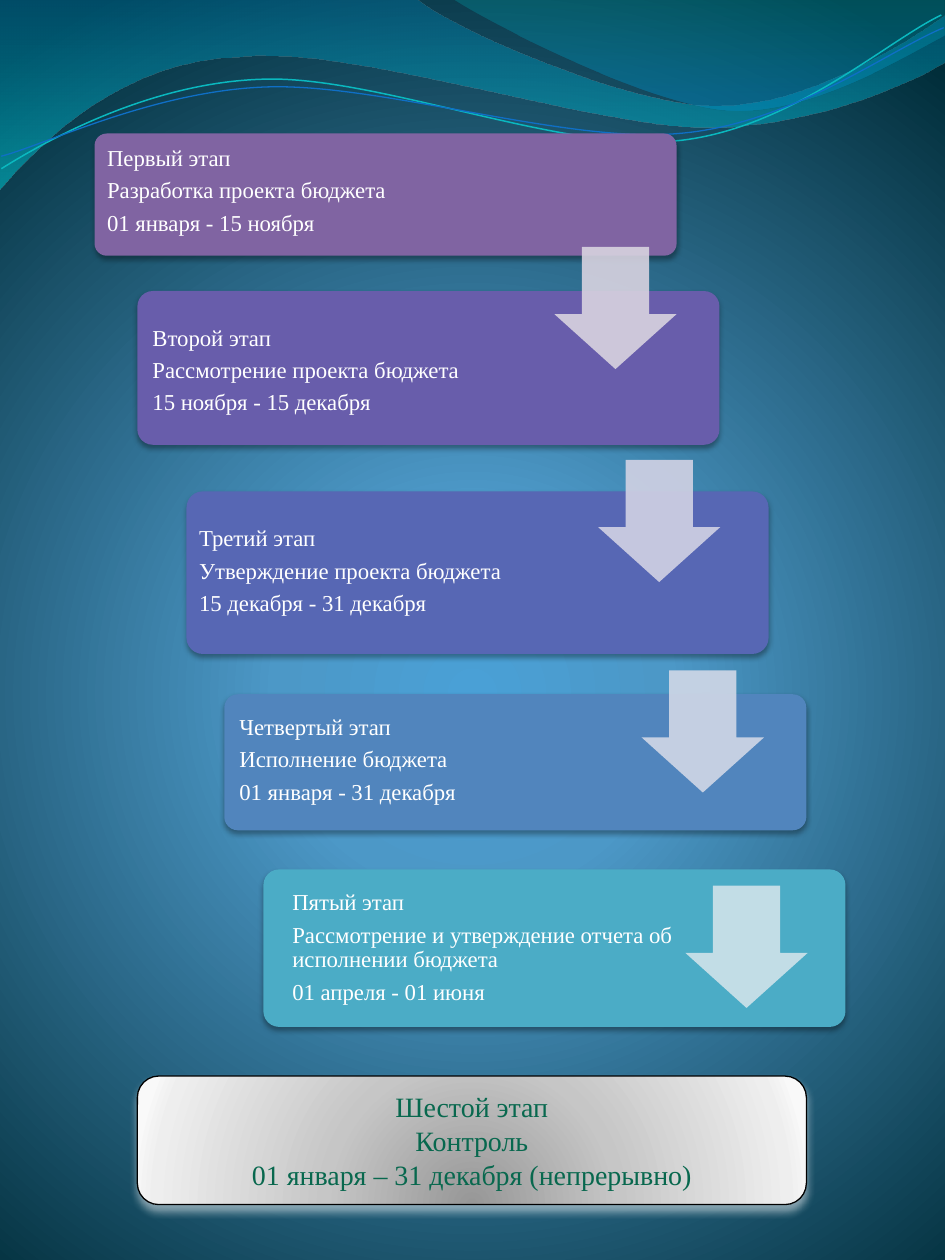
import math

from lxml import etree
from pptx import Presentation
from pptx import util as u
from pptx.dml.color import RGBColor
from pptx.enum import shapes, text
from pptx.oxml.ns import qn

PX = 9144  # EMU in one px, 100 px to the inch
FONT = "Times New Roman"

# Outlines: a start point, then one point for a line or three for a curve.
WAVES = [
    ([[(0, -1)], [(330, -1)], [(357, 22), (498, 84), (569, 84)],
      [(640, 84), (719, 34), (750, 12)], [(751, 48)],
      [(738, 58), (652, 101), (559, 101)], [(466, 100), (286, 37), (193, 45)],
      [(97, 47), (34, 111), (-1, 151)]],
     [(0, "0074A1", 45), (100, "00C6CF", 55)]),
    ([[(359, -1)], [(382, 15), (511, 82), (577, 87)],
      [(642, 92), (721, 43), (750, 28)], [(750, 0)]],
     [(0, "00A1A9", 30), (80, "008BBF", 45)]),
]
STRANDS = [
    ([[(1, 134)], [(36, 112), (118, 66), (207, 63)], [(296, 59), (445, 121), (535, 112)],
      [(626, 104), (703, 33), (747, 12)]], "0AB8BF", 0.85),
    ([[(1, 124)], [(36, 115), (122, 72), (212, 69)], [(302, 66), (449, 114), (538, 106)],
      [(628, 99), (705, 40), (749, 22)]], "0F6FC6", 0.75),
]
STRAND_TILT = 2.7  # degrees counter-clockwise
STRAND_CENTER = (375, 78)
# Card left, top, height, fill; text box offset, width, height, inset; lines
STAGES = [
    ((75, 106, 97, "8064A2"), (4, -15, 284, 122, 6),
     ["Первый этап", "Разработка проекта бюджета", "01 января - 15 ноября"]),
    ((109, 231, 122, "685DAB"), (6, 6, 322, 115, 6),
     ["Второй этап", "Рассмотрение проекта бюджета", "15 ноября - 15 декабря"]),
    ((148, 390, 129, "5767B4"), (4, 3, 322, 122, 6),
     ["Третий этап", "Утверждение проекта бюджета", "15 декабря - 31 декабря"]),
    ((178, 551, 108, "5185BD"), (5, 2, 322, 101, 7),
     ["Четвертый этап", "Исполнение бюджета", "01 января - 31 декабря"]),
    ((209, 690, 125, "4BACC6"), (16, 4, 322, 117, 7),
     ["Пятый этап", "Рассмотрение и утверждение отчета об исполнении бюджета",
      "01 апреля - 01 июня"]),
]
CARD_W = 462
ARROWS = [(196, "D8D3E0"), (365, "D2D2E4"), (532, "D1D8E7"), (703, "D0E3EA")]
ARROW_LEFT, ARROW_STEP, ARROW_SIZE = 440, 34.67, 97


def px(*values):
    return [round(v * PX) for v in values]


def rgb(code):
    return RGBColor.from_string(code)


def add_color(parent, code, alpha=100):
    color = etree.SubElement(parent, qn("a:srgbClr"), val=code)
    if alpha < 100:
        etree.SubElement(color, qn("a:alpha"), val=str(alpha * 1000))


def set_gradient(fill, owner, stops, center=None):
    """Fill with (position, colour, alpha) stops, downwards or round a center rectangle."""
    fill.gradient()
    grad = owner.find(".//" + qn("a:gradFill"))
    for child in list(grad):
        grad.remove(child)
    stop_list = etree.SubElement(grad, qn("a:gsLst"))
    for pos, code, alpha in stops:
        add_color(etree.SubElement(stop_list, qn("a:gs"), pos=str(pos * 1000)), code, alpha)
    if center:
        path = etree.SubElement(grad, qn("a:path"))
        path.set("path", "circle")
        sides = {side: str(v * 1000) for side, v in zip("ltrb", center)}
        etree.SubElement(path, qn("a:fillToRect"), **sides)
    else:
        etree.SubElement(grad, qn("a:lin"), ang="5400000", scaled="1")


def set_shadow(sp, code, alpha, blur, dist):
    sp.shadow.inherit = False
    effects = sp._element.spPr.find(qn("a:effectLst"))
    shadow = etree.SubElement(effects, qn("a:outerShdw"), blurRad=str(u.Pt(blur)),
                              dist=str(u.Pt(dist)), dir="5400000", rotWithShape="0")
    add_color(shadow, code, alpha)


def add_outline(s, outline, close):
    """Freeform whose three-point segments become Bezier curves."""
    points = [px(*p) for segment in outline for p in segment]
    builder = s.shapes.build_freeform(*points[0])
    builder.add_line_segments(points[1:], close=close)
    sp = builder.convert_to_shape()
    sp.shadow.inherit = False
    lines = iter(sp._element.findall(".//" + qn("a:lnTo")))
    for segment in outline[1:]:
        first = next(lines)
        if len(segment) == 3:
            first.tag = qn("a:cubicBezTo")
            for line in (next(lines), next(lines)):
                line.getparent().remove(line)
                first.append(line[0])
    return sp


def turn(point, degrees, center):
    a = math.radians(degrees)
    dx, dy = point[0] - center[0], point[1] - center[1]
    return (center[0] + dx * math.cos(a) - dy * math.sin(a),
            center[1] + dx * math.sin(a) + dy * math.cos(a))


def add_waves(s):
    for outline, stops in WAVES:
        sp = add_outline(s, outline, True)
        set_gradient(sp.fill, sp._element.spPr, stops)
        sp.line.fill.background()
    for outline, code, width in STRANDS:
        level = [[turn(p, STRAND_TILT, STRAND_CENTER) for p in seg] for seg in outline]
        sp = add_outline(s, level, False)
        sp.rotation = 360 - STRAND_TILT
        sp.fill.background()
        sp.line.color.rgb = rgb(code)
        sp.line.width = u.Pt(width)


def write_lines(tf, lines, size, code, align, spacing=None, after=None):
    tf.word_wrap = True
    tf.vertical_anchor = text.MSO_ANCHOR.MIDDLE
    for i, line in enumerate(lines):
        p = tf.add_paragraph() if i else tf.paragraphs[0]
        p.alignment = align
        p.line_spacing = spacing
        p.space_after = after
        r = p.add_run()
        r.text = line
        r.font.size, r.font.name = u.Pt(size), FONT
        r.font.color.rgb = rgb(code)


def add_stage(s, card, label, lines):
    left, top, height, code = card
    dx, dy, label_w, label_h, inset = label
    sp = s.shapes.add_shape(shapes.MSO_SHAPE.ROUNDED_RECTANGLE, *px(left, top, CARD_W, height))
    sp.adjustments[0] = 0.1
    sp.fill.solid()
    sp.fill.fore_color.rgb = rgb(code)
    sp.line.fill.background()
    set_shadow(sp, "000000", 35, 3.1, 1.8)
    tf = s.shapes.add_textbox(*px(left + dx, top + dy, label_w, label_h)).text_frame
    tf.margin_left = tf.margin_top = tf.margin_right = tf.margin_bottom = inset * PX
    write_lines(tf, lines, 13, "FFFFFF", text.PP_ALIGN.LEFT, 0.9, u.Pt(4.5))


def add_arrow(s, left, top, code):
    sp = s.shapes.add_shape(shapes.MSO_SHAPE.DOWN_ARROW, *px(left, top, ARROW_SIZE, ARROW_SIZE))
    sp.adjustments[0], sp.adjustments[1] = 0.55, 0.45
    sp.fill.solid()
    sp.fill.fore_color.rgb = rgb(code)
    color = sp._element.spPr.find(qn("a:solidFill"))[0]
    etree.SubElement(color, qn("a:alpha"), val="90000")
    sp.line.fill.background()
    sp.shadow.inherit = False


def add_control_stage(s, left, top, width, height):
    sp = s.shapes.add_shape(shapes.MSO_SHAPE.ROUNDED_RECTANGLE, *px(left, top, width, height))
    set_gradient(sp.fill, sp._element.spPr,
                 [(0, "979797", 100), (43, "C6C6C6", 100), (93, "EEEEEE", 100),
                  (100, "F9F9F9", 100)], (50, 130, 50, -30))
    sp.line.color.rgb = rgb("000000")
    sp.line.width = u.Pt(0.75)
    set_shadow(sp, "FFFFFF", 48, 4.5, 3)
    write_lines(sp.text_frame, ["Шестой этап", "Контроль", "01 января – 31 декабря (непрерывно)"],
                16, "08684E", text.PP_ALIGN.CENTER)


def main():
    prs = Presentation()
    prs.slide_width, prs.slide_height = px(750, 1000)
    s = prs.slides.add_slide(prs.slide_layouts[6])
    set_gradient(s.background.fill, s._element,
                 [(0, "4AA0D6", 100), (25, "4C98C7", 100), (100, "002C38", 100)],
                 (10, 110, 10, 100))
    add_waves(s)
    for stage in STAGES:
        add_stage(s, *stage)
    for i, (top, code) in enumerate(ARROWS):
        add_arrow(s, ARROW_LEFT + i * ARROW_STEP, top, code)
    add_control_stage(s, 109, 854, 531, 102)
    prs.save("out.pptx")


if __name__ == "__main__":
    main()
